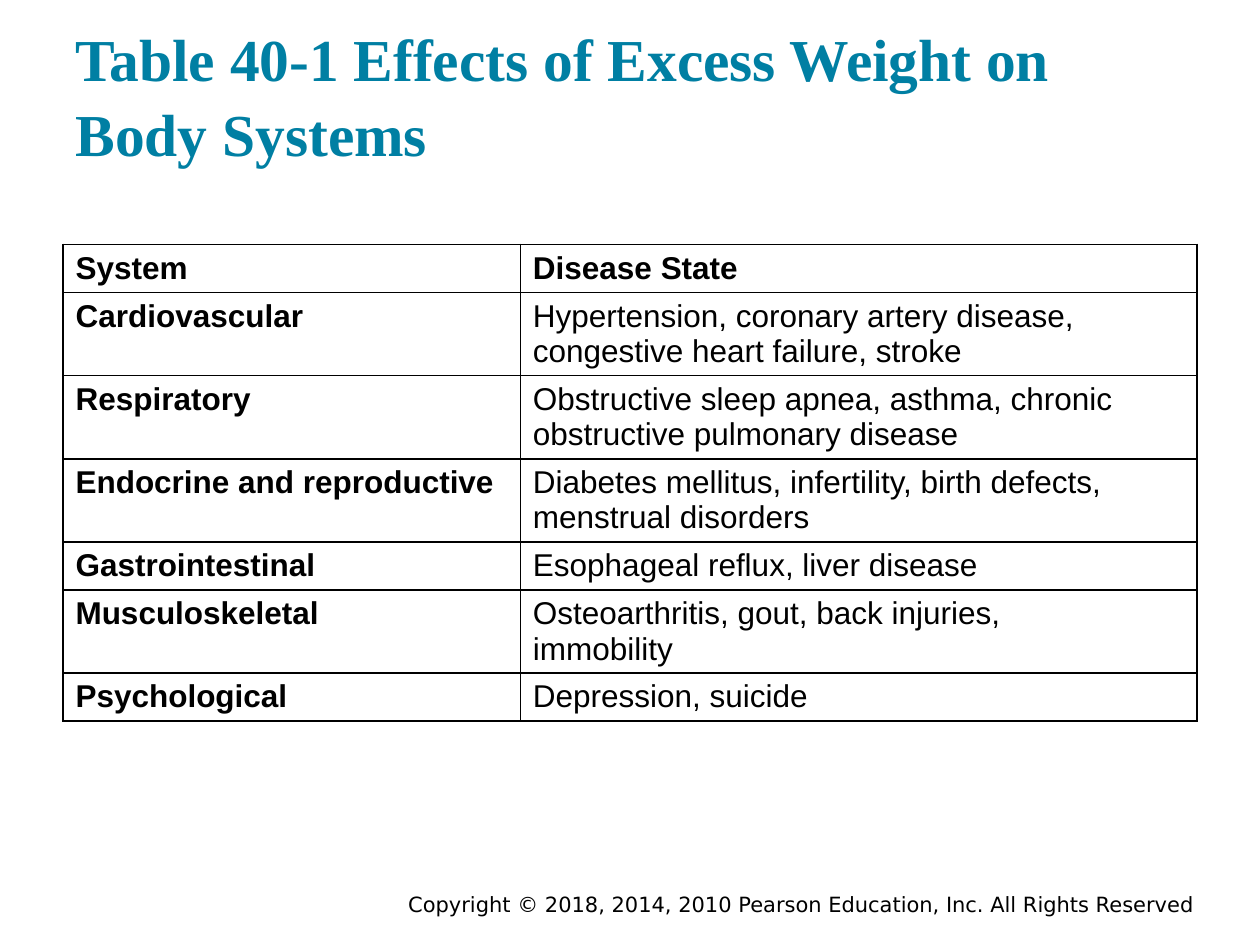
from lxml.etree import SubElement
from pptx import Presentation
from pptx.dml.color import RGBColor
from pptx.enum.text import MSO_ANCHOR, MSO_AUTO_SIZE, PP_ALIGN
from pptx.oxml.ns import qn
from pptx.util import Inches, Pt

TITLE = "Table 40-1 Effects of Excess Weight on Body Systems"
CREDIT = "Copyright © 2018, 2014, 2010 Pearson Education, Inc. All Rights Reserved"
ROWS = [
    ("System", "Disease State"),
    ("Cardiovascular",
     "Hypertension, coronary artery disease, congestive heart failure, stroke"),
    ("Respiratory",
     "Obstructive sleep apnea, asthma, chronic obstructive pulmonary disease"),
    ("Endocrine and reproductive",
     "Diabetes mellitus, infertility, birth defects, menstrual disorders"),
    ("Gastrointestinal", "Esophageal reflux, liver disease"),
    ("Musculoskeletal", "Osteoarthritis, gout, back injuries,\nimmobility"),
    ("Psychological", "Depression, suicide"),
]
COLS = (3.63, 5.37)
LEFT, TOP = 0.5, 1.94
ONE, TWO = 0.38, 0.66   # heights of one-line and two-line rows
FIT = 36                # characters that fit on one line of column two


def style(frame, font, size, color, bold=False):
    for para in frame.paragraphs:
        for run in para.runs:
            run.font.name, run.font.size, run.font.bold = font, Pt(size), bold
            run.font.color.rgb = RGBColor.from_string(color)


def border(cell, color="000000", width=1):
    props = cell._tc.get_or_add_tcPr()
    for i, side in enumerate(("a:lnL", "a:lnR", "a:lnT", "a:lnB")):
        line = SubElement(props, qn(side), w=str(Pt(width)))
        fill = SubElement(line, qn("a:solidFill"))
        SubElement(fill, qn("a:srgbClr"), val=color)
        props.remove(line)
        props.insert(i, line)


prs = Presentation()
prs.slide_width, prs.slide_height = Inches(10), Inches(7.5)
slide = prs.slides.add_slide(prs.slide_layouts[5])

# Title
title = slide.shapes.title
title.left, title.top = Inches(LEFT), Inches(0.24)
title.width, title.height = Inches(sum(COLS)), Inches(1.2)
frame = title.text_frame
frame.text = TITLE
frame.auto_size = MSO_AUTO_SIZE.NONE
frame.vertical_anchor = MSO_ANCHOR.BOTTOM
frame.margin_left = frame.margin_right = Inches(0.1)
frame.margin_top = frame.margin_bottom = Inches(0.1)
frame.paragraphs[0].alignment = PP_ALIGN.LEFT
frame.paragraphs[0].line_spacing = 1.05
style(frame, "Times New Roman", 34, "007FA3", True)

# Table of systems and diseases
highs = [TWO if len(text) > FIT else ONE for _, text in ROWS]
table = slide.shapes.add_table(
    len(ROWS), len(COLS), Inches(LEFT), Inches(TOP),
    Inches(sum(COLS)), Inches(sum(highs))).table
table.horz_banding = False
for col, width in zip(table.columns, COLS):
    col.width = Inches(width)
for r, (row, high) in enumerate(zip(ROWS, highs)):
    table.rows[r].height = Inches(high)
    for c, text in enumerate(row):
        cell = table.cell(r, c)
        cell.text_frame.text = text
        cell.fill.background()
        border(cell)
        style(cell.text_frame, "Arial", 18, "000000", r == 0 or c == 0)

# Copyright line
box = slide.shapes.add_textbox(Inches(2.92), Inches(7.05), Inches(6.66), Inches(0.25))
frame = box.text_frame
frame.word_wrap = True
frame.vertical_anchor = MSO_ANCHOR.MIDDLE
frame.text = CREDIT
frame.paragraphs[0].alignment = PP_ALIGN.RIGHT
style(frame, "DejaVu Sans", 12, "000000")

prs.save("out.pptx")
